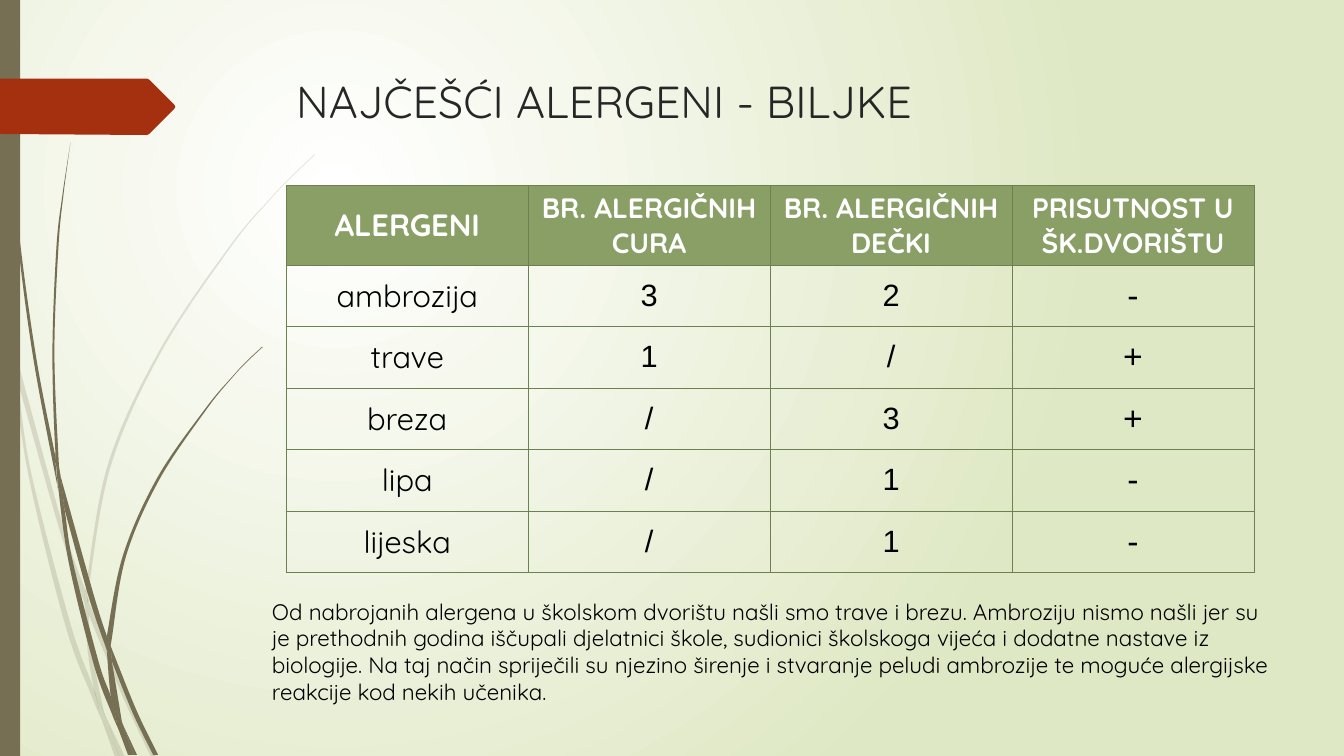
from lxml.etree import SubElement
from pptx import Presentation
from pptx.dml.color import RGBColor
from pptx.enum.text import MSO_ANCHOR, PP_ALIGN
from pptx.enum.shapes import MSO_SHAPE
from pptx.oxml import parse_xml
from pptx.oxml.ns import nsdecls, qn
from pptx.util import Pt

PX = 9144  # 100 px to the inch
WIDTH, HEIGHT = 1333.33, 750
COLORS = {"white": "FFFFFF", "lime": "DFE8C4", "stem": "766F54", "red": "A53010",
          "title": "262626", "text": "000000", "header": "899F65", "border": "6D804F"}
FONT, DIGITS = "Quicksand", "Arial"

# Each piece of grass has two curved sides: one down, one back up
PALE_GRASS = [
    ([(0, 282), (9, 322), (11, 350)], [(10, 344), (0, 299)]),
    ([(14, 345), (62, 520), (85, 586)], [(84, 599), (58, 522), (17, 376)]),
    ([(88, 596), (92, 607), (127, 692), (155, 751)], [(150, 751), (123, 694), (88, 610)]),
    ([(105, 711), (124, 751)], [(119, 751)]),
    ([(11, 350), (17, 376), (31, 469), (70, 619), (93, 683), (99, 707)],
     [(101, 714), (92, 693), (65, 621), (28, 470), (11, 350)]),
    ([(84, 599), (87, 646), (93, 683), (96, 692), (105, 711)],
     [(103, 706), (91, 646), (88, 610), (88, 608)]),
    ([(312, 153), (289, 175), (268, 197), (228, 244), (158, 348), (107, 461), (85, 584), (85, 586)],
     [(88, 596), (88, 584), (110, 462), (160, 349), (229, 245), (268, 198), (290, 175), (312, 154)]),
    ([(101, 714), (114, 751)], [(119, 751)]),
    ([(85, 586), (88, 596)], [(88, 610), (88, 608), (84, 599)]),
    ([(93, 683), (96, 692), (105, 711), (119, 751)], [(101, 714), (99, 707)]),
]
DARK_GRASS = [
    ([(3, 0), (4, 48), (7, 110), (17, 233), (33, 355), (56, 477), (57, 481)],
     [(55, 457), (55, 453), (36, 355), (19, 232), (8, 109), (5, 48), (4, 0)]),
    ([(60, 472), (93, 590), (106, 631)], [(106, 645), (88, 592), (64, 505)]),
    ([(110, 641), (113, 649), (136, 706), (157, 749)], [(152, 749), (132, 708), (111, 656)]),
    ([(57, 477), (64, 505), (72, 556), (98, 657), (110, 691), (116, 717)],
     [(117, 722), (111, 708), (93, 659), (68, 557), (57, 477)]),
    ([(70, 141), (62, 193), (56, 245), (52, 349), (55, 449), (60, 472)],
     [(60, 472), (58, 453), (54, 349), (58, 245), (63, 193), (70, 141)]),
    ([(122, 719), (136, 749)], [(133, 749)]),
    ([(55, 449), (60, 472), (64, 505)], [(57, 477), (55, 453)]),
    ([(260, 344), (245, 358), (231, 373), (204, 405), (156, 474), (122, 551), (106, 631)],
     [(110, 641), (111, 633), (125, 552), (158, 476), (205, 406), (231, 374), (245, 359), (261, 344)]),
    ([(117, 722), (131, 749)], [(127, 749)]),
    ([(106, 645), (110, 691), (116, 706), (122, 719)], [(121, 716), (111, 656), (109, 651)]),
    ([(106, 631), (110, 641), (111, 656)], [(109, 651), (106, 645)]),
    ([(110, 691), (116, 706), (122, 719), (133, 749)], [(130, 749), (117, 722), (116, 717)]),
]
ARROW = [(0, 78), (146, 78), (148, 79), (173, 104), (174, 106), (173, 108), (148, 133),
         (146, 134), (0, 133)]
TITLE = "NAJČEŠĆI ALERGENI - BILJKE"
ROWS = [
    ["ALERGENI", "BR. ALERGIČNIH CURA", "BR. ALERGIČNIH DEČKI", "PRISUTNOST U ŠK.DVORIŠTU"],
    ["ambrozija", "3", "2", "-"],
    ["trave", "1", "/", "+"],
    ["breza", "/", "3", "+"],
    ["lipa", "/", "1", "-"],
    ["lijeska", "/", "1", "-"],
]
NOTE = ("Od nabrojanih alergena u školskom dvorištu našli smo trave i brezu. Ambroziju nismo našli "
        "jer su je prethodnih godina iščupali djelatnici škole, sudionici školskoga vijeća i dodatne "
        "nastave iz biologije. Na taj način spriječili su njezino širenje i stvaranje peludi ambrozije "
        "te moguće alergijske reakcije kod nekih učenika.")


def emu(*lengths):
    return [round(length * PX) for length in lengths]


def rgb(name):
    return RGBColor.from_string(COLORS[name])


def write(frame, text, color, align=PP_ALIGN.LEFT, **font):
    frame.word_wrap = True
    para = frame.paragraphs[0]
    para.alignment = align
    span = para.add_run()
    span.text = text
    for name, value in font.items():
        setattr(span.font, name, value)
    span.font.color.rgb = rgb(color)


def paint(shape, color):
    shape.shadow.inherit = False
    shape.fill.solid()
    shape.fill.fore_color.rgb = rgb(color)
    shape.line.fill.background()


def add_background(page):
    fill = page.background.fill
    fill.gradient()
    for stop, name, position in zip(fill.gradient_stops, ("white", "lime"), (0, 1)):
        stop.color.rgb = rgb(name)
        stop.position = position
    gradient = page.element.find(".//" + qn("a:gradFill"))
    gradient.replace(gradient.find(qn("a:lin")), parse_xml(
        f'<a:path {nsdecls("a")} path="circle">'
        '<a:fillToRect l="50000" t="50000" r="100000" b="100000"/></a:path>'))


def add_outline(page, points, left, top, color):
    corners = [emu(left + x, top + y) for x, y in points]
    builder = page.shapes.build_freeform(*corners[0], scale=1.0)
    builder.add_line_segments(corners[1:], close=True)
    shape = builder.convert_to_shape()
    paint(shape, color)
    return shape


def curve_points(side):
    """Two control points and an end point for each stretch of a smooth side."""
    ends = [side[0], *side, side[-1]]
    points = []
    for a, b, c, d in zip(ends, ends[1:], ends[2:], ends[3:]):
        points += [[q + (r - p) / 6 for p, q, r in zip(a, b, c)],
                   [r - (s - q) / 6 for q, r, s in zip(b, c, d)], c]
    return points


def add_grass(page, sides, left, top, alpha=None):
    down, up = sides
    points = [down[0], *curve_points(down), *curve_points([down[-1], up[0]]), *curve_points(up)]
    piece = add_outline(page, points, left, top, "stem")
    segments = list(piece.element.iter(qn("a:lnTo")))
    for first, second, third in zip(segments[::3], segments[1::3], segments[2::3]):
        first.tag = qn("a:cubicBezTo")
        for segment in (second, third):
            first.append(segment[0])
            segment.getparent().remove(segment)
    if alpha:
        color = piece.element.spPr.find(".//" + qn("a:srgbClr"))
        SubElement(color, qn("a:alpha"), val=str(alpha * 1000))


def add_decoration(page, left, top, height):
    for grass, alpha in ((PALE_GRASS, 20), (DARK_GRASS, None)):
        for sides in grass:
            add_grass(page, sides, left, top, alpha)
    strip = page.shapes.add_shape(MSO_SHAPE.RECTANGLE, *emu(left, top, 20, height))
    paint(strip, "stem")
    add_outline(page, ARROW, left, top, "red")


def add_text(page, text, color, size, left, top, width, height):
    box = page.shapes.add_textbox(*emu(left, top, width, height))
    write(box.text_frame, text, color, size=Pt(size), name=FONT)


def add_borders(cell):
    properties = cell._tc.get_or_add_tcPr()
    for i, side in enumerate("LRTB"):
        properties.insert(i, parse_xml(
            f'<a:ln{side} {nsdecls("a")} w="9525"><a:solidFill>'
            f'<a:srgbClr val="{COLORS["border"]}"/></a:solidFill></a:ln{side}>'))


def add_allergen_table(page, left, top, width, header_height, row_height):
    height = header_height + row_height * (len(ROWS) - 1)
    frame = page.shapes.add_table(len(ROWS), len(ROWS[0]), *emu(left, top, width, height))
    table = frame.table
    table.horz_banding = False
    for r, row in enumerate(ROWS):
        table.rows[r].height = emu(row_height if r else header_height)[0]
        for c, text in enumerate(row):
            cell = table.cell(r, c)
            cell.vertical_anchor = MSO_ANCHOR.MIDDLE
            if r == 0:
                cell.fill.solid()
                cell.fill.fore_color.rgb = rgb("header")
                size = 20 if c else 22
            else:
                cell.fill.background()
                size = 24 if c == len(row) - 1 else 22
            add_borders(cell)
            write(cell.text_frame, text, "text" if r else "white", PP_ALIGN.CENTER,
                  size=Pt(size), name=DIGITS if r and c else FONT, bold=r == 0)


def main():
    deck = Presentation()
    deck.slide_width, deck.slide_height = emu(WIDTH, HEIGHT)
    page = deck.slides.add_slide(deck.slide_layouts[6])
    add_background(page)
    add_decoration(page, 0, 0, HEIGHT)
    add_text(page, TITLE, "title", 32, 284, 68, 975, 75)
    add_allergen_table(page, 284, 184, 960, 79, 61)
    add_text(page, NOTE, "text", 16, 260, 588, 1022, 118)
    deck.save("out.pptx")


if __name__ == "__main__":
    main()
